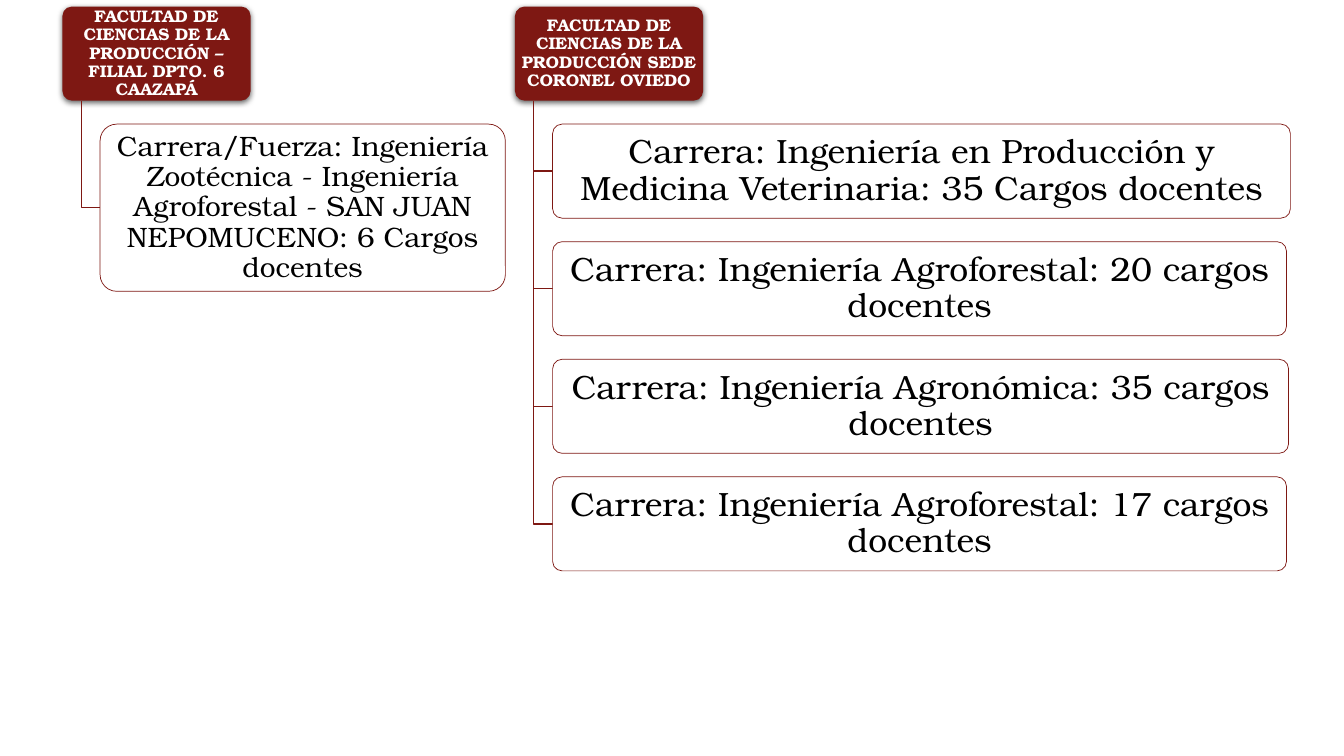
from dataclasses import dataclass
from lxml.etree import SubElement
from pptx import Presentation
from pptx.dml.color import RGBColor
from pptx.enum.shapes import MSO_SHAPE
from pptx.enum.text import MSO_ANCHOR, PP_ALIGN
from pptx.oxml.ns import qn
from pptx.util import Inches, Pt


@dataclass(frozen=True)
class Theme:
    font: str = "TeX Gyre Bonum"
    wine: RGBColor = RGBColor(0x7E, 0x18, 0x13)
    white: RGBColor = RGBColor(0xFF, 0xFF, 0xFF)
    black: RGBColor = RGBColor(0, 0, 0)
    head: int = 12
    small: int = 20
    large: int = 24
    rule: float = 1
    edge: float = 0.5


THEME = Theme()
WIDTH, HEIGHT = Inches(13.33), Inches(7.5)
UNIT = WIDTH * 0.014
TOP = 0.35
HEAD_W, HEAD_H = 10, 5
GAP, INDENT = 1.25, 1

BRANCHES = [
    (3.32, "FACULTAD DE CIENCIAS DE LA PRODUCCIÓN – FILIAL DPTO. 6 CAAZAPÁ", THEME.small, [
        (21.54, 8.89, "Carrera/Fuerza: Ingeniería Zootécnica - Ingeniería Agroforestal"
                      " - SAN JUAN NEPOMUCENO: 6 Cargos docentes"),
    ]),
    (27.37, "FACULTAD DE CIENCIAS DE LA PRODUCCIÓN SEDE CORONEL OVIEDO", THEME.large, [
        (39.21, 5, "Carrera: Ingeniería en Producción y Medicina Veterinaria: 35 Cargos docentes"),
        (39, 5, "Carrera: Ingeniería Agroforestal: 20 cargos docentes"),
        (39.11, 5, "Carrera: Ingeniería Agronómica: 35 cargos docentes"),
        (39, 5, "Carrera: Ingeniería Agroforestal: 17 cargos docentes"),
    ]),
]


def grid(*units):
    return [round(unit * UNIT) for unit in units]


def add_card(slide, box, text, size, color, bold=False):
    card = slide.shapes.add_shape(MSO_SHAPE.ROUNDED_RECTANGLE, *grid(*box))
    card.adjustments[0] = 0.1
    card.shadow.inherit = False
    card.fill.solid()
    frame = card.text_frame
    frame.text = text
    frame.word_wrap = True
    frame.vertical_anchor = MSO_ANCHOR.MIDDLE
    frame.margin_left = frame.margin_right = Pt(size / 7)
    frame.margin_top = frame.margin_bottom = Pt(size / 11)
    line = frame.paragraphs[0]
    line.alignment = PP_ALIGN.CENTER
    line.line_spacing = 0.9
    line.space_after = Pt(size * 0.35)
    font = line.runs[0].font
    font.name, font.size, font.bold = THEME.font, Pt(size), bold
    font.color.rgb = color
    return card


def add_head(slide, box, text):
    card = add_card(slide, box, text, THEME.head, THEME.white, True)
    card.fill.fore_color.rgb = THEME.wine
    card.line.fill.background()
    effects = card._element.spPr.find(qn("a:effectLst"))
    shadow = SubElement(effects, qn("a:outerShdw"), blurRad=str(Pt(4.5)),
                        dist=str(Pt(1.5)), dir="5400000", rotWithShape="0")
    tint = SubElement(shadow, qn("a:srgbClr"), val=str(THEME.black))
    SubElement(tint, qn("a:alpha"), val="63000")


def add_leaf(slide, box, text, size):
    card = add_card(slide, box, text, size, THEME.black)
    card.fill.fore_color.rgb = THEME.white
    tint = card._element.spPr.find(qn("a:solidFill"))[0]
    SubElement(tint, qn("a:alpha"), val="90000")
    card.line.color.rgb = THEME.wine
    card.line.width = Pt(THEME.edge)


def add_elbow(slide, left, top, right, bottom):
    start, bend, end = grid(left, top), grid(left, bottom), grid(right, bottom)
    path = slide.shapes.build_freeform(*start)
    path.add_line_segments([bend, end], close=False)
    elbow = path.convert_to_shape()
    elbow.shadow.inherit = False
    elbow.fill.background()
    elbow.line.color.rgb = THEME.wine
    elbow.line.width = Pt(THEME.rule)


def add_branch(slide, left, top, title, size, leaves):
    add_head(slide, (left, top, HEAD_W, HEAD_H), title)
    base = top + HEAD_H
    stem, side = left + INDENT, left + 2 * INDENT
    row = base + GAP
    for width, height, text in leaves:
        add_elbow(slide, stem, base, side, row + height / 2)
        add_leaf(slide, (side, row, width, height), text, size)
        row += height + GAP


def main():
    deck = Presentation()
    deck.slide_width, deck.slide_height = WIDTH, HEIGHT
    slide = deck.slides.add_slide(deck.slide_layouts[6])
    for left, title, size, leaves in BRANCHES:
        add_branch(slide, left, TOP, title, size, leaves)
    deck.save("out.pptx")


if __name__ == "__main__":
    main()
